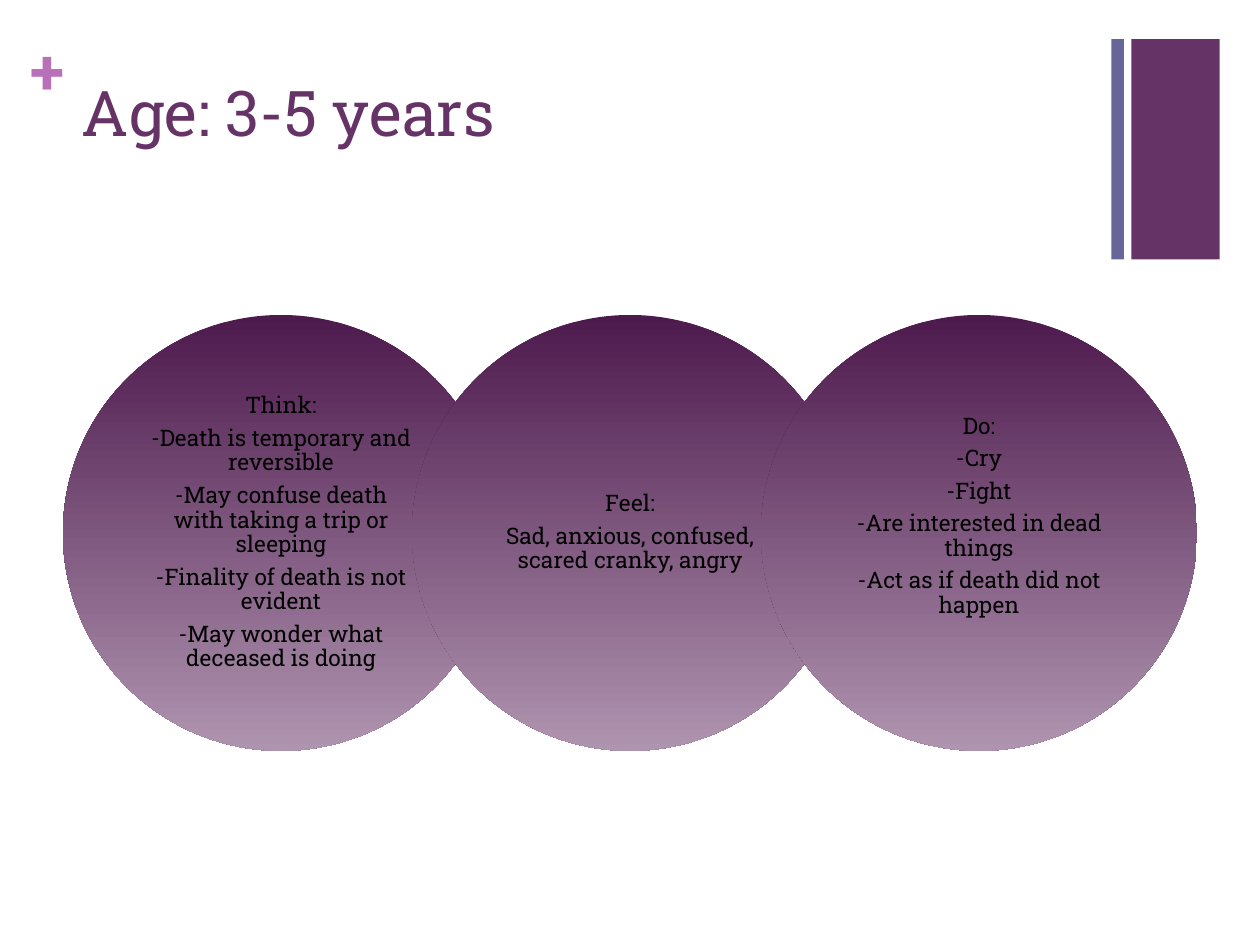
from pptx import Presentation
from pptx.dml.color import RGBColor
from pptx.enum.shapes import MSO_SHAPE
from pptx.enum.text import MSO_ANCHOR, MSO_AUTO_SIZE, PP_ALIGN
from pptx.util import Inches, Pt

RECTANGLE, OVAL = MSO_SHAPE.RECTANGLE, MSO_SHAPE.OVAL
TOP, MIDDLE = MSO_ANCHOR.TOP, MSO_ANCHOR.MIDDLE
LEFT, CENTER = PP_ALIGN.LEFT, PP_ALIGN.CENTER
NO_AUTOFIT = MSO_AUTO_SIZE.NONE

PURPLE = RGBColor(0x66, 0x33, 0x66)
SLATE = RGBColor(0x66, 0x66, 0x99)
ORCHID = RGBColor(0xB8, 0x70, 0xB8)
DARK_PLUM = RGBColor(0x4D, 0x1A, 0x4D)
PALE_PLUM = RGBColor(0xAF, 0x94, 0xAF)
BLACK = RGBColor(0, 0, 0)
FONT = "Roboto Slab"


def apply_format(target, values):
    for name, value in values.items():
        setattr(target, name, value)


def write(paragraph, text, size, color, bold=False):
    run = paragraph.add_run()
    run.text = text
    apply_format(run.font, {"name": FONT, "size": Pt(size), "bold": bold})
    run.font.color.rgb = color


prs = Presentation()
prs.slide_width, prs.slide_height = Inches(10), Inches(7.5)
slide = prs.slides.add_slide(prs.slide_layouts[5])

# Corner bars
for left, width, color in [(8.98, 0.7, PURPLE), (8.82, 0.1, SLATE)]:
    bar = slide.shapes.add_shape(
        RECTANGLE, Inches(left), Inches(0.31), Inches(width), Inches(1.75))
    bar.shadow.inherit = False
    bar.fill.solid()
    bar.fill.fore_color.rgb = color
    bar.line.fill.background()

# Plus sign
plus = slide.shapes.add_textbox(
    Inches(0.24), Inches(0.25), Inches(0.29), Inches(0.61)).text_frame
apply_format(plus, {"margin_left": 0, "margin_top": 0,
                    "margin_right": 0, "margin_bottom": 0})
write(plus.paragraphs[0], "+", 36, ORCHID, bold=True)

# Title
title = slide.shapes.title
apply_format(title, {"left": Inches(0.55), "top": Inches(0.53),
                     "width": Inches(8.26), "height": Inches(1.22)})
apply_format(title.text_frame, {"vertical_anchor": TOP, "word_wrap": True,
                                "auto_size": NO_AUTOFIT})
heading = title.text_frame.paragraphs[0]
heading.alignment = LEFT
write(heading, "Age: 3-5 years", 36, PURPLE)

# Overlapping circles; a larger bottom margin lifts the text
DIAMETER, STEP = 3.46, 2.77
circles = [
    (0.02, ["Think:",
            "-Death is temporary and reversible",
            "-May confuse death with taking a trip or sleeping",
            "-Finality of death is not evident",
            "-May wonder what deceased is doing"]),
    (0.02, ["Feel:",
            "Sad, anxious, confused, scared cranky, angry"]),
    (0.28, ["Do:",
            "-Cry",
            "-Fight",
            "-Are interested in dead things",
            "-Act as if death did not happen"]),
]
for index, (bottom_margin, lines) in enumerate(circles):
    circle = slide.shapes.add_shape(
        OVAL, Inches(0.5 + index * STEP), Inches(2.5),
        Inches(DIAMETER), Inches(DIAMETER))
    circle.shadow.inherit = False
    circle.line.fill.background()
    circle.fill.gradient()
    circle.fill.gradient_angle = 270
    for stop, position, color in zip(
            circle.fill.gradient_stops, (0, 1), (DARK_PLUM, PALE_PLUM)):
        stop.position = position
        stop.color.rgb = color

    frame = circle.text_frame
    apply_format(frame, {
        "word_wrap": True, "vertical_anchor": MIDDLE,
        "margin_left": Inches(0.19), "margin_right": Inches(0.19),
        "margin_top": Inches(0.02), "margin_bottom": Inches(bottom_margin)})
    for number, line in enumerate(lines):
        paragraph = frame.add_paragraph() if number else frame.paragraphs[0]
        apply_format(paragraph, {"alignment": CENTER, "line_spacing": 0.9,
                                 "space_after": Pt(4.5)})
        write(paragraph, line, 13, BLACK)

prs.save("out.pptx")
